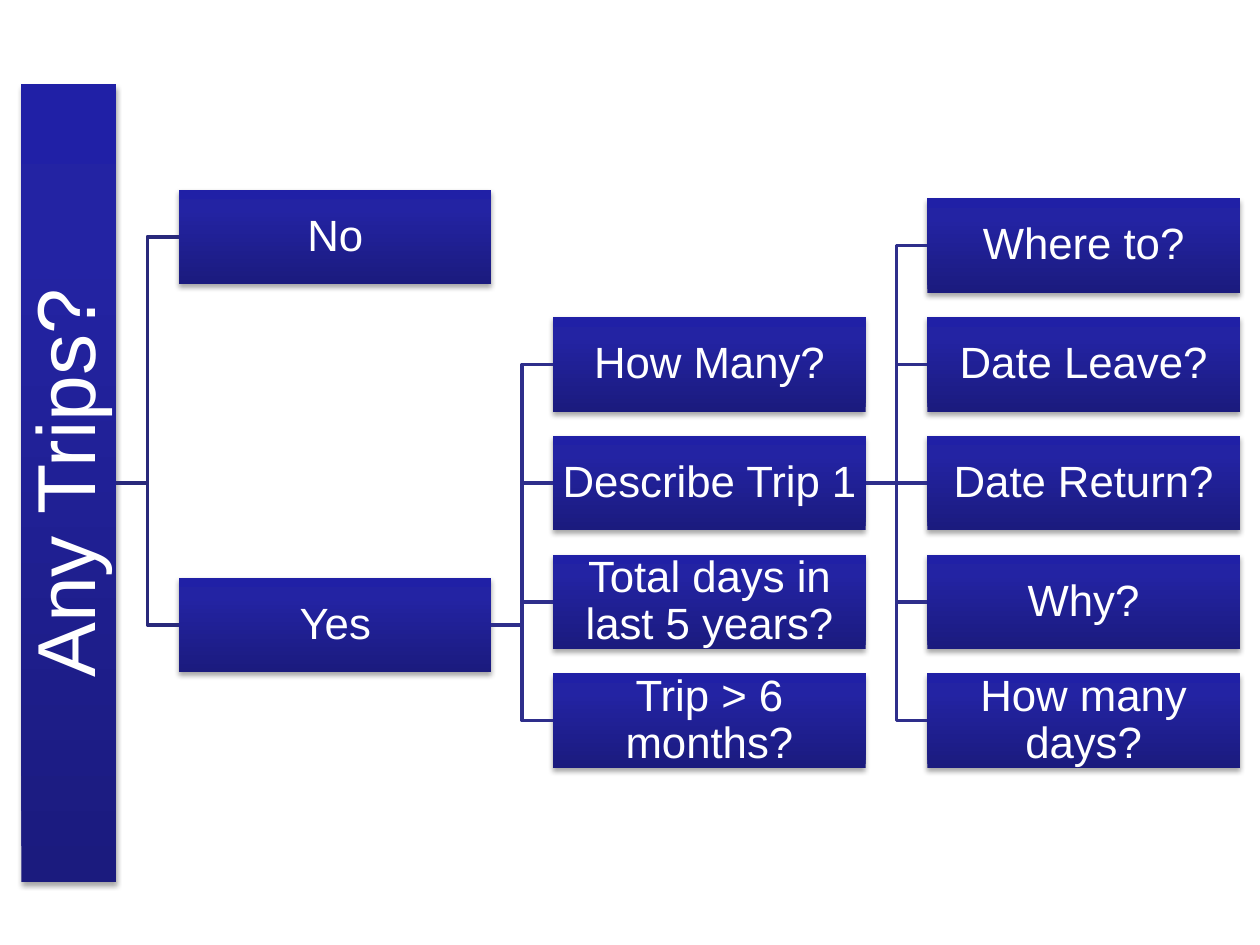
from lxml import etree
from pptx import Presentation
from pptx import util as u
from pptx.dml.color import RGBColor
from pptx.enum import shapes, text
from pptx.oxml import parse_xml
from pptx.oxml.ns import nsdecls, qn

BOX_WIDTH, BOX_HEIGHT = 2.48, 0.75
COLUMN_LEFTS = [1.42 + 2.97 * column for column in range(3)]
ROW_CENTERS = [1.95 + (5.72 - 1.95) / 4 * row for row in range(5)]
GRADIENT_STOPS = [(0, "1B1B7E"), (80, "2323A3"), (100, "2020A6")]


def color(value):
    return RGBColor.from_string(value)


def add_gradient_and_shadow(box):
    stops = "".join(
        f'<a:gs pos="{position * 1000}"><a:srgbClr val="{value}"/></a:gs>'
        for position, value in GRADIENT_STOPS)
    gradient = parse_xml(
        f'<a:gradFill {nsdecls("a")} rotWithShape="1"><a:gsLst>{stops}</a:gsLst>'
        '<a:lin ang="16200000" scaled="0"/></a:gradFill>')
    shadow = parse_xml(
        f'<a:effectLst {nsdecls("a")}><a:outerShdw blurRad="{u.Pt(3.1)}" '
        f'dist="{u.Pt(1.8)}" dir="5400000" rotWithShape="0">'
        '<a:srgbClr val="000000"><a:alpha val="35000"/></a:srgbClr>'
        '</a:outerShdw></a:effectLst>')
    properties = box._element.spPr
    properties.find(qn("a:prstGeom")).addnext(gradient)
    properties.append(shadow)


def write_text(box, label, size=25, inset=0.02, font="Arial", fill="FFFFFF"):
    frame = box.text_frame
    frame.word_wrap = True
    frame.vertical_anchor = text.MSO_ANCHOR.MIDDLE
    frame.margin_left = frame.margin_right = u.Inches(inset)
    frame.margin_top = frame.margin_bottom = u.Inches(inset)
    para = frame.paragraphs[0]
    para.alignment = text.PP_ALIGN.CENTER
    para.line_spacing = 0.9
    span = para.add_run()
    span.text = label
    span.font.name = font
    span.font.size = u.Pt(size)
    span.font.color.rgb = color(fill)


def add_box(page, label, left, top, width, height, **text_format):
    box = page.shapes.add_shape(
        shapes.MSO_SHAPE.RECTANGLE,
        *(u.Inches(length) for length in (left, top, width, height)))
    box.line.fill.background()
    add_gradient_and_shadow(box)
    write_text(box, label, **text_format)
    return box


def add_root(page, label, left, top, width, height):
    """Tall box whose label reads from bottom to top."""
    box = add_box(page, label, left, top, width, height, size=47, inset=0.03)
    box.text_frame._txBody.bodyPr.set("vert", "vert270")
    return box


def add_column(page, labels, left, centers):
    return [
        add_box(page, label, left, center - BOX_HEIGHT / 2, BOX_WIDTH, BOX_HEIGHT)
        for label, center in zip(labels, centers)]


def connect(page, parent, children, line_color="2E2E8B"):
    """Join the right side of the parent to the left side of each child."""
    parent_middle = parent.top + parent.height // 2
    for child in children:
        offset = child.top + child.height // 2 - parent_middle
        level = abs(offset) < u.Inches(0.01)
        kind = shapes.MSO_CONNECTOR.STRAIGHT if level else shapes.MSO_CONNECTOR.ELBOW
        link = page.shapes.add_connector(kind, 0, 0, 0, 0)
        link.begin_connect(parent, 3)
        link.end_connect(child, 1)
        link.line.color.rgb = color(line_color)
        link.line.width = u.Pt(2)
        etree.SubElement(link._element.spPr, qn("a:effectLst"))


def add_trip_tree(page):
    root = add_root(page, "Any Trips?", 0.17, 0.67, 0.75, 6.33)
    answers = add_column(page, ["No", "Yes"], COLUMN_LEFTS[0], [1.88, 4.96])
    questions = add_column(
        page,
        ["How Many?", "Describe Trip 1", "Total days in last 5 years?",
         "Trip > 6 months?"],
        COLUMN_LEFTS[1], ROW_CENTERS[1:])
    details = add_column(
        page,
        ["Where to?", "Date Leave?", "Date Return?", "Why?", "How many days?"],
        COLUMN_LEFTS[2], ROW_CENTERS)
    connect(page, root, answers, line_color="29297B")
    connect(page, answers[1], questions)
    connect(page, questions[1], details)


def main():
    deck = Presentation()
    deck.slide_width, deck.slide_height = u.Inches(10), u.Inches(7.5)
    page = deck.slides.add_slide(deck.slide_layouts[6])
    add_trip_tree(page)
    deck.save("out.pptx")


if __name__ == "__main__":
    main()
